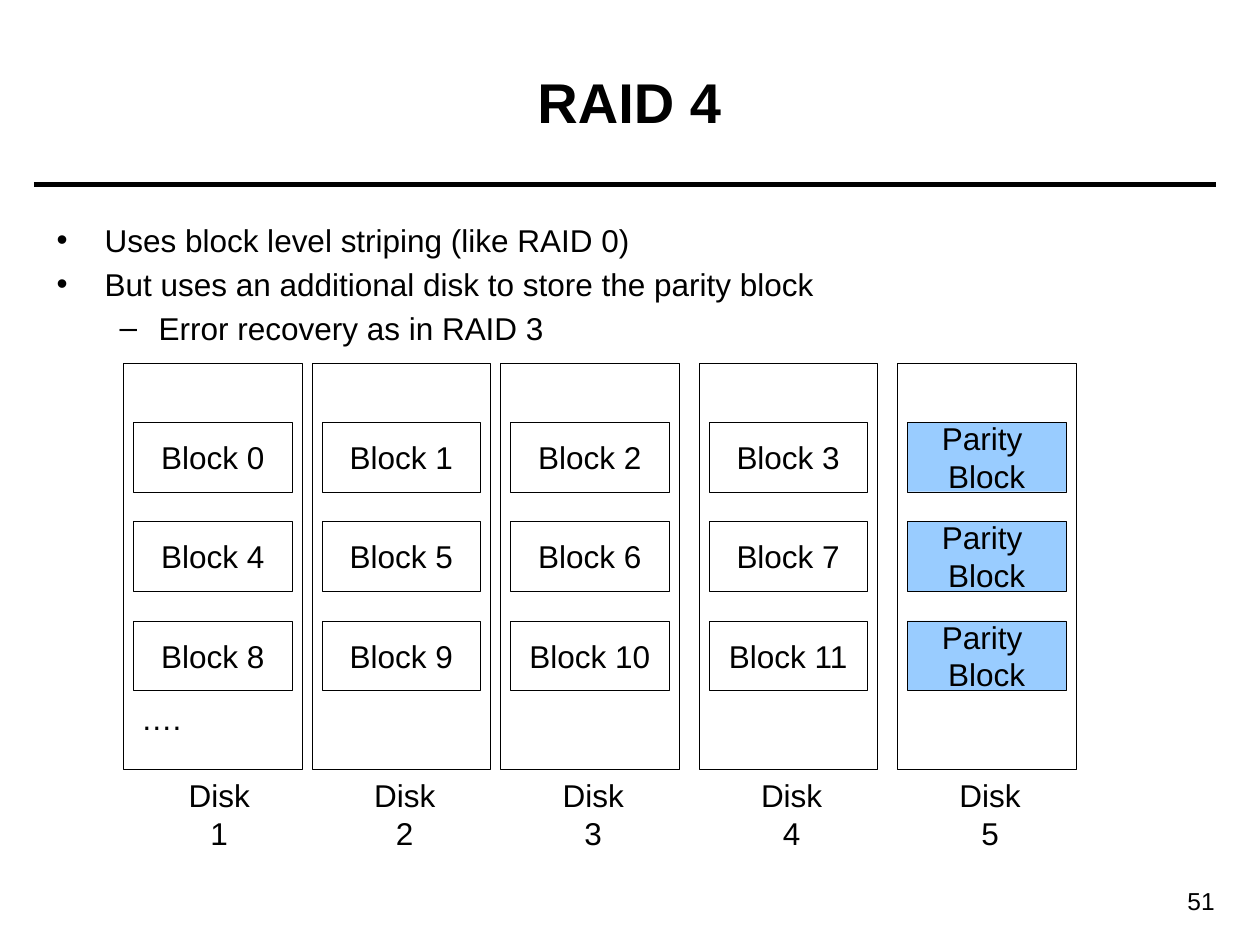
from dataclasses import dataclass

from pptx import Presentation
from pptx.dml.color import RGBColor
from pptx.enum.shapes import MSO_CONNECTOR, MSO_SHAPE
from pptx.enum.text import MSO_ANCHOR, MSO_AUTO_SIZE, PP_ALIGN
from pptx.oxml.xmlchemy import OxmlElement
from pptx.util import Inches, Mm, Pt


@dataclass(frozen=True)
class Theme:
    """Colours, type sizes and line widths."""
    font: str = "Arial"
    ink: RGBColor = RGBColor(0x00, 0x00, 0x00)
    parity: RGBColor = RGBColor(0x99, 0xCC, 0xFF)
    title: Pt = Pt(32)
    body: Pt = Pt(18)
    number: Pt = Pt(14)
    rule: Pt = Pt(3)
    outline: Pt = Pt(0.25)


class Deck:
    """Holds the theme, the current slide and the disk grid."""

    def __init__(self, theme):
        self.theme = theme
        self.prs = Presentation()
        self.prs.slide_width, self.prs.slide_height = Inches(10), Inches(7.5)
        self.s = self.prs.slides.add_slide(self.prs.slide_layouts[1])
        self.cell, self.left, self.top = Mm(2), Inches(0.98), Inches(2.88)

    def percent(self, x, y, w, h):
        """Turn percentages of the slide into a box."""
        sw, sh = self.prs.slide_width, self.prs.slide_height
        return [round(v * size / 100) for v, size in zip((x, y, w, h), (sw, sh, sw, sh))]

    def cells(self, col, row, cols, rows):
        """Turn grid cells into a box."""
        x, y, w, h = (round(v * self.cell) for v in (col, row, cols, rows))
        return [self.left + x, self.top + y, w, h]

    def run(self, p, text, size, bold=False):
        """Add one styled run."""
        r = p.add_run()
        r.text = text
        r.font.name, r.font.size, r.font.bold = self.theme.font, size, bold
        r.font.color.rgb = self.theme.ink

    def add_lines(self, tf, lines, size, align, bold=False):
        """Add one paragraph per line and return the paragraphs."""
        for i, text in enumerate(lines):
            p = tf.add_paragraph() if i else tf.paragraphs[0]
            p.alignment = align
            self.run(p, text, size, bold)
        return tf.paragraphs

    def place(self, sp, box, anchor):
        """Move a placeholder and fix its text frame."""
        sp.left, sp.top, sp.width, sp.height = box
        tf = sp.text_frame
        tf.auto_size, tf.vertical_anchor = MSO_AUTO_SIZE.NONE, anchor
        return tf

    def title(self, text, box):
        """Fill the title placeholder."""
        tf = self.place(self.s.shapes.title, box, MSO_ANCHOR.MIDDLE)
        self.add_lines(tf, [text], self.theme.title, PP_ALIGN.CENTER, True)

    def bullets(self, items, box):
        """Fill the body placeholder from (level, text) pairs."""
        indents = [(0.38, -0.38), (0.81, -0.31)]
        tf = self.place(self.s.placeholders[1], box, MSO_ANCHOR.TOP)
        lines = [text for _, text in items]
        paragraphs = self.add_lines(tf, lines, self.theme.body, PP_ALIGN.LEFT)
        for p, (level, _) in zip(paragraphs, items):
            p.level = level
            margin, first = indents[level]
            pPr = p._p.get_or_add_pPr()
            pPr.set("marL", str(Inches(margin)))
            pPr.set("indent", str(Inches(first)))

    def rule(self, x, y, w):
        """Draw a horizontal rule."""
        left, top, width, _ = self.percent(x, y, w, 0)
        sp = self.s.shapes.add_connector(MSO_CONNECTOR.STRAIGHT, left, top, left + width, top)
        sp.line.color.rgb, sp.line.width = self.theme.ink, self.theme.rule
        sp._element.spPr.append(OxmlElement("a:effectLst"))

    def label(self, text, box, size, align=PP_ALIGN.CENTER):
        """Add a one-line text box."""
        tf = self.s.shapes.add_textbox(*box).text_frame
        tf.word_wrap = False
        self.add_lines(tf, [text], size, align)

    def rect(self, box, lines=(), fill=None):
        """Add an outlined rectangle with centred lines of text."""
        sp = self.s.shapes.add_shape(MSO_SHAPE.RECTANGLE, *box)
        sp.shadow.inherit = False
        sp.line.color.rgb, sp.line.width = self.theme.ink, self.theme.outline
        if fill is None:
            sp.fill.background()
        else:
            sp.fill.solid()
            sp.fill.fore_color.rgb = fill
        tf = sp.text_frame
        tf.word_wrap, tf.vertical_anchor = False, MSO_ANCHOR.MIDDLE
        self.add_lines(tf, lines, self.theme.body, PP_ALIGN.CENTER)


def main():
    """Build the RAID 4 slide."""
    theme = Theme()
    deck = Deck(theme)
    deck.rule(2.7, 19.55, 93.8)
    deck.label("51", deck.percent(87, 93.1, 10.4, 4.5), theme.number, PP_ALIGN.RIGHT)
    deck.title("RAID 4", deck.percent(3.5, 2.3, 92.9, 16.7))
    deck.bullets([
        (0, "Uses block level striping (like RAID 0)"),
        (0, "But uses an additional disk to store the parity block"),
        (1, "Error recovery as in RAID 3"),
    ], deck.percent(3.5, 22.7, 92.9, 68.3))

    disks = [0, 19, 38, 58, 78]
    names = [4, 22.7, 41.7, 61.7, 81.7]
    data_disks = len(disks) - 1
    for stripe in range(3):
        for i, col in enumerate(disks):
            box = deck.cells(col + 1, 6 + 10 * stripe, 16, 7)
            if i < data_disks:
                deck.rect(box, [f"Block {stripe * data_disks + i}"])
            else:
                deck.rect(box, ["Parity ", "Block"], theme.parity)
    deck.label("….", deck.cells(0.5, 33.3, 6.6, 5), theme.body)
    for i, (col, name) in enumerate(zip(disks, names), 1):
        deck.rect(deck.cells(col, 0, 18, 41))
        deck.label(f"Disk {i}", deck.cells(name, 41, 11.3, 5), theme.body)
    deck.prs.save("out.pptx")


if __name__ == "__main__":
    main()
